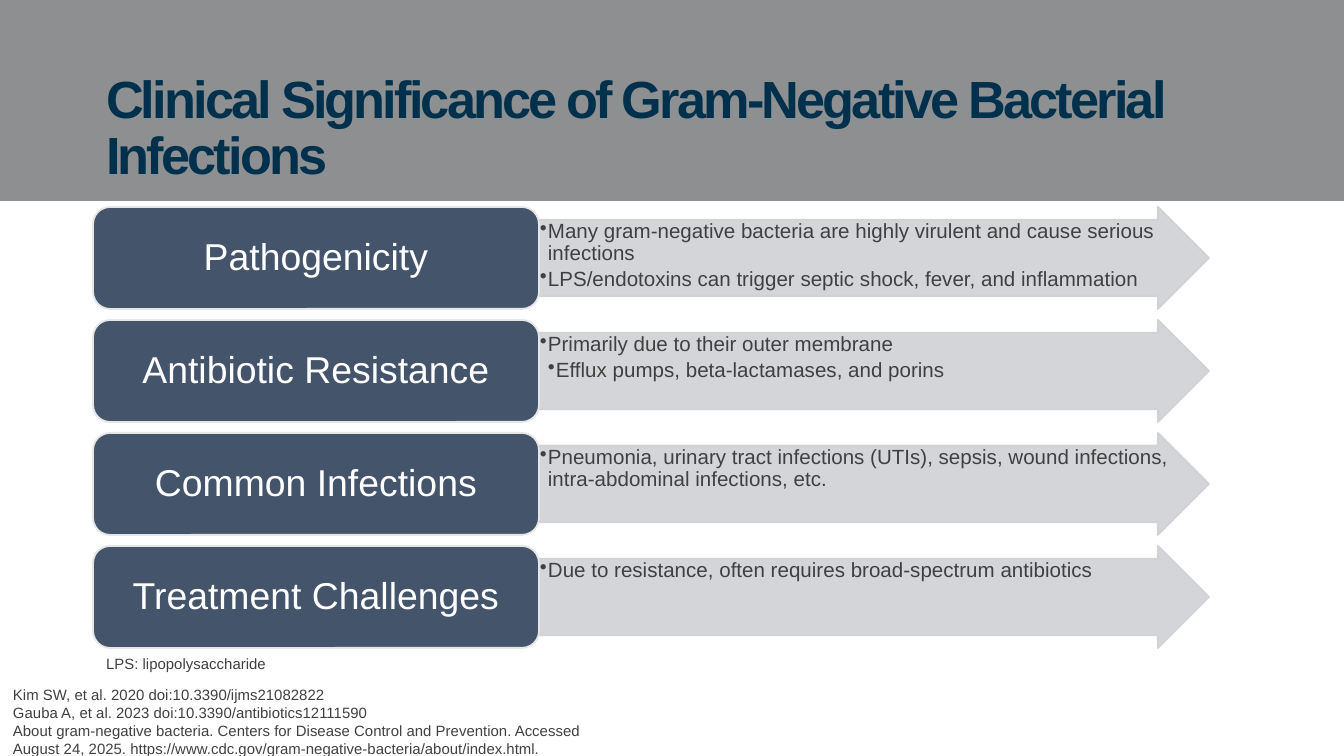
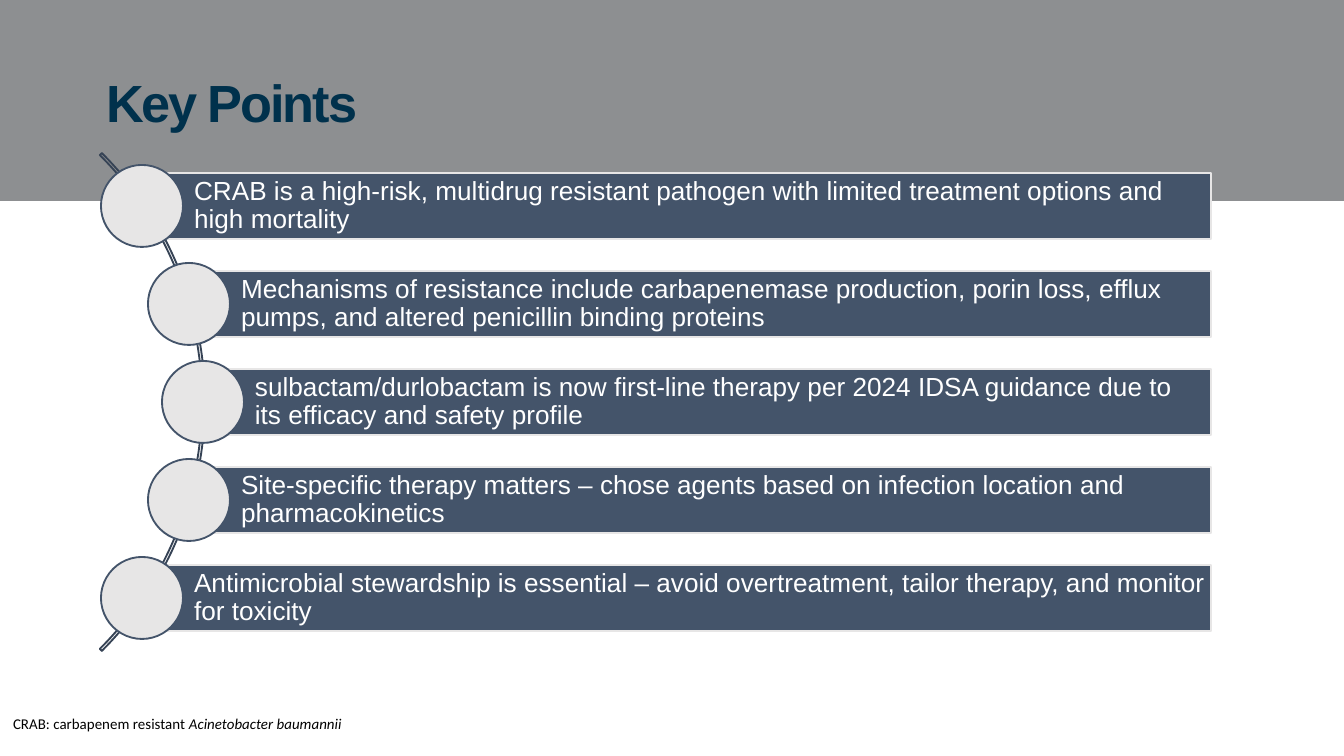
import pptx
import pptx.util
import pptx.dml.color
import pptx.enum.shapes
import pptx.enum.text
import pptx.oxml
import pptx.oxml.ns

SHAPE = pptx.enum.shapes.MSO_SHAPE
ALIGN = pptx.enum.text.PP_ALIGN
ANCHOR = pptx.enum.text.MSO_ANCHOR

COLORS = {
    "band": "8D8F91",
    "title": "00314C",
    "slate": "44546A",
    "pale": "E7E6E6",
    "arrow": "CFD1D4",
    "arc": "364355",
    "body": "404040",
    "white": "FFFFFF",
    "black": "000000",
}

TOPICS = [
    ("Pathogenicity", [
        ("Many gram-negative bacteria are highly virulent and cause serious infections", 1),
        ("LPS/endotoxins can trigger septic shock, fever, and inflammation", 1),
    ]),
    ("Antibiotic Resistance", [
        ("Primarily due to their outer membrane", 1),
        ("Efflux pumps, beta-lactamases, and porins", 2),
    ]),
    ("Common Infections", [
        ("Pneumonia, urinary tract infections (UTIs), sepsis, wound infections, "
         "intra-abdominal infections, etc.", 1),
    ]),
    ("Treatment Challenges", [
        ("Due to resistance, often requires broad-spectrum antibiotics", 1),
    ]),
]

REFERENCES = [
    "Kim SW, et al. 2020 doi:10.3390/ijms21082822",
    "Gauba A, et al. 2023 doi:10.3390/antibiotics12111590",
    "About gram-negative bacteria. Centers for Disease Control and Prevention. "
    "Accessed August 24, 2025. https://www.cdc.gov/gram-negative-bacteria/about/index.html.",
]

KEY_POINTS = [
    (142, "CRAB is a high-risk, multidrug resistant pathogen with limited treatment "
          "options and high mortality"),
    (189, "Mechanisms of resistance include carbapenemase production, porin loss, "
          "efflux pumps, and altered penicillin binding proteins"),
    (203, "sulbactam/durlobactam is now first-line therapy per 2024 IDSA guidance "
          "due to its efficacy and safety profile"),
    (189, "Site-specific therapy matters – chose agents based on infection location "
          "and pharmacokinetics"),
    (142, "Antimicrobial stewardship is essential – avoid overtreatment, tailor "
          "therapy, and monitor for toxicity"),
]


def px(n):
    return pptx.util.Emu(round(n * 914400 / 134.4))


def rgb(name):
    return pptx.dml.color.RGBColor.from_string(COLORS[name])


def add_run(p, text, size=14, color="body", font="Arial", bold=False, italic=False, spacing=0):
    r = p.add_run()
    r.text = text
    r.font.size = pptx.util.Pt(size)
    r.font.name = font
    r.font.bold = bold
    r.font.italic = italic
    r.font.color.rgb = rgb(color)
    if spacing:
        r.font._element.set("spc", str(round(spacing * 100)))
    return r


def next_paragraph(tf, first, align=ALIGN.LEFT, line=1.0, after=0):
    p = tf.paragraphs[0] if first else tf.add_paragraph()
    p.alignment = align
    p.line_spacing = line
    p.space_before = pptx.util.Pt(0)
    p.space_after = pptx.util.Pt(after)
    return p


def set_bullet(p, level):
    p.level = level
    pPr = p._p.get_or_add_pPr()
    pPr.set("marL", str(px(8 * level)))
    pPr.set("indent", str(-px(8)))
    bullet = pptx.oxml.parse_xml(
        '<a:buChar %s char="•"/>' % pptx.oxml.ns.nsdecls("a"))
    pPr.append(bullet)


def set_frame(tf, insets=(13, 7, 13, 7), anchor=ANCHOR.MIDDLE):
    tf.word_wrap = True
    tf.auto_size = pptx.enum.text.MSO_AUTO_SIZE.NONE
    tf.vertical_anchor = anchor
    tf.margin_left, tf.margin_top, tf.margin_right, tf.margin_bottom = map(px, insets)


def set_alpha(sp, percent):
    for color in sp._element.spPr.iter(pptx.oxml.ns.qn("a:srgbClr")):
        color.append(pptx.oxml.parse_xml(
            '<a:alpha %s val="%d"/>' % (pptx.oxml.ns.nsdecls("a"), percent * 1000)))


def add_shape(s, kind, box, fill=None, line=None):
    sp = s.shapes.add_shape(kind, *map(px, box))
    sp.shadow.inherit = False
    if fill:
        sp.fill.solid()
        sp.fill.fore_color.rgb = rgb(fill)
    else:
        sp.fill.background()
    if line:
        sp.line.color.rgb = rgb(line)
        sp.line.width = pptx.util.Pt(1)
    else:
        sp.line.fill.background()
    return sp


def add_label(sp, text, size, insets, align=ALIGN.LEFT):
    set_frame(sp.text_frame, insets)
    p = next_paragraph(sp.text_frame, True, align, 0.9)
    add_run(p, text, size=size, color="white")


def add_note(s, box, lines, **fmt):
    tf = s.shapes.add_textbox(*map(px, box)).text_frame
    set_frame(tf, anchor=ANCHOR.TOP)
    for i, runs in enumerate(lines):
        p = next_paragraph(tf, i == 0)
        for text, italic in runs:
            add_run(p, text, size=8, italic=italic, **fmt)


def add_bullet_arrow(s, box, items):
    sp = add_shape(s, SHAPE.RIGHT_ARROW, box, "arrow", "arrow")
    sp.adjustments[0] = 0.75
    sp.adjustments[1] = 0.5
    set_alpha(sp, 90)
    set_frame(sp.text_frame, (1, 1, 1, 1), ANCHOR.TOP)
    for i, (text, level) in enumerate(items):
        p = next_paragraph(sp.text_frame, i == 0, line=0.9, after=2)
        set_bullet(p, level)
        add_run(p, text, size=11)


def add_slide(prs, title, box, spacing):
    s = prs.slides.add_slide(prs.slide_layouts[5])
    sp = s.shapes.title
    sp.left, sp.top, sp.width, sp.height = map(px, box)
    set_frame(sp.text_frame)
    p = next_paragraph(sp.text_frame, True, line=0.9)
    add_run(p, title, size=28, color="title", bold=True, spacing=spacing)
    return s


def move_band_to_layout(prs, s):
    band = add_shape(s, SHAPE.RECTANGLE, (0, 0, 1344, 201), "band")
    prs.slide_layouts[5].shapes._spTree.insert(2, band._element)


def build_significance(prs):
    s = add_slide(prs, "Clinical Significance of Gram-Negative Bacterial Infections",
                  (93, 66, 1159, 127), -1.5)
    move_band_to_layout(prs, s)
    for i, (topic, items) in enumerate(TOPICS):
        top = 207 + 113 * i
        add_bullet_arrow(s, (539, top, 670, 102), items)
        sp = add_shape(s, SHAPE.ROUNDED_RECTANGLE, (93, top, 446, 102), "slate", "pale")
        add_label(sp, topic, 20, (10, 5, 10, 5), ALIGN.CENTER)
    add_note(s, (0, 679, 603, 76), [[(text, False)] for text in REFERENCES])
    add_note(s, (93, 648, 344, 32), [[("LPS: lipopolysaccharide", False)]])


def build_key_points(prs):
    s = add_slide(prs, "Key Points", (93, 70, 1159, 71), -1.1)
    arc = add_shape(s, SHAPE.BLOCK_ARC, (-499, 50, 704, 704), line="arc")
    for i, value in enumerate((189, 27, 0.004)):
        arc.adjustments[i] = value
    for i, (left, text) in enumerate(KEY_POINTS):
        top = 173 + 98 * i
        bar = add_shape(s, SHAPE.RECTANGLE, (left, top, 1211 - left, 66), "slate", "pale")
        add_label(bar, text, 14, (52, 5, 5, 5))
        add_shape(s, SHAPE.OVAL, (left - 41, top - 8, 82, 82), "pale", "slate")
    add_note(s, (0, 708, 520, 32),
             [[("CRAB: carbapenem resistant ", False), ("Acinetobacter baumannii", True)]],
             font="Calibri", color="black")


def main():
    prs = pptx.Presentation()
    prs.slide_width, prs.slide_height = px(1344), px(756)
    build_significance(prs)
    build_key_points(prs)
    prs.save("out.pptx")


if __name__ == "__main__":
    main()
